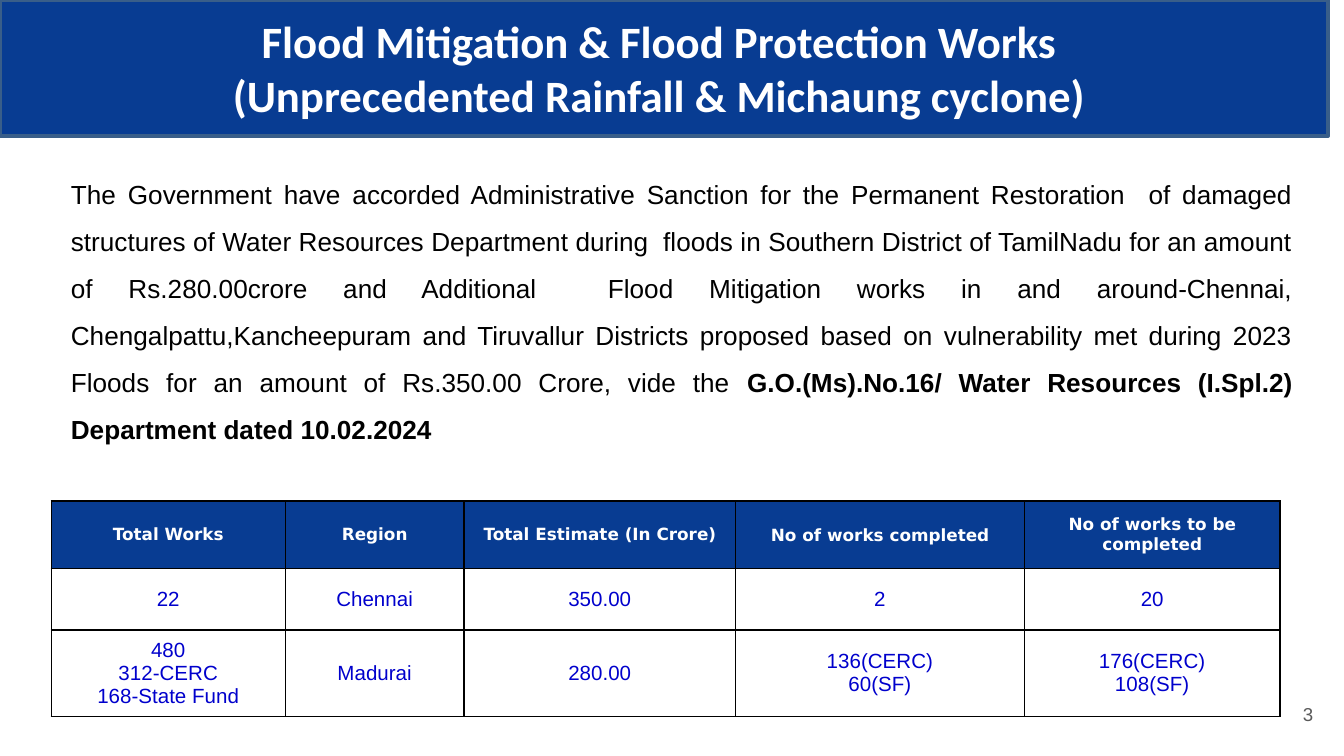
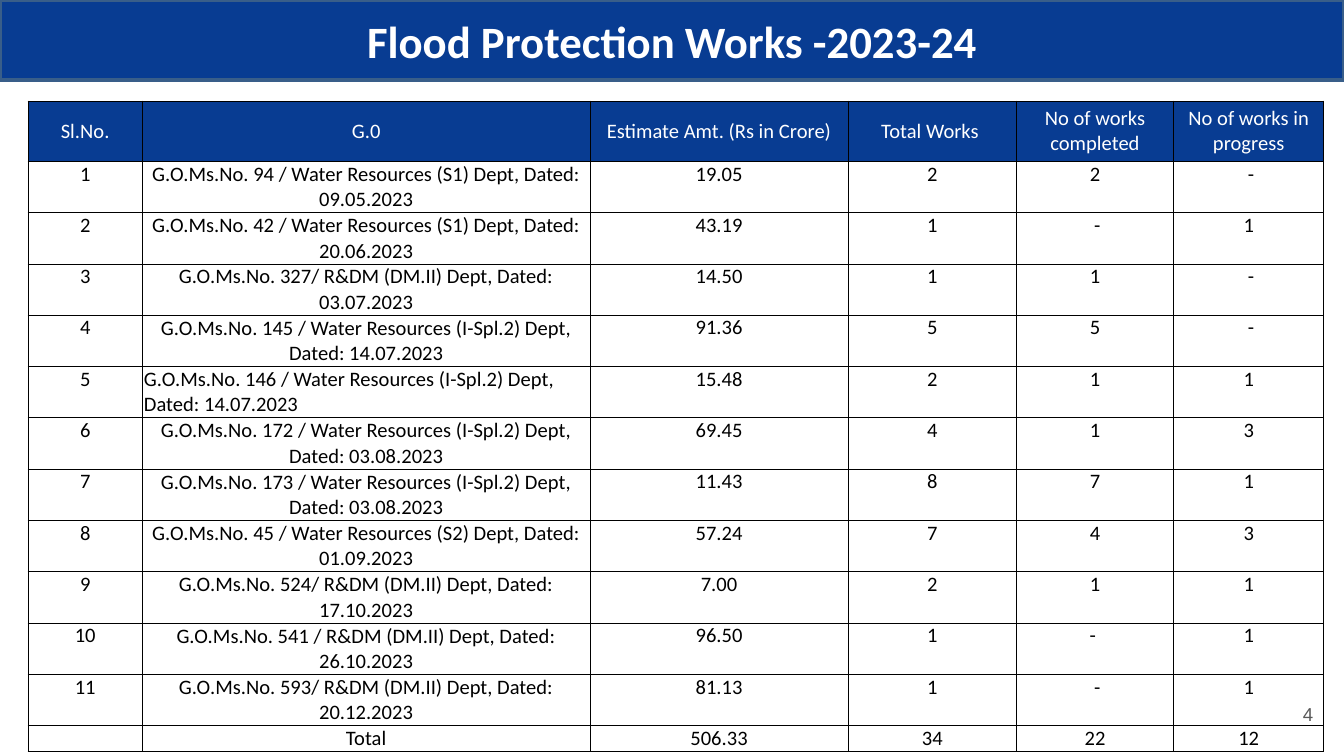
from dataclasses import dataclass

from lxml.etree import SubElement
from pptx import Presentation
from pptx.dml.color import RGBColor
from pptx.enum.shapes import MSO_SHAPE as Preset
from pptx.enum.text import MSO_ANCHOR as Anchor, MSO_AUTO_SIZE as AutoSize, PP_ALIGN as Align
from pptx.oxml.ns import qn
from pptx.util import Cm, Pt

# Colours
NAVY = RGBColor(0x08, 0x3C, 0x92)
BAND_EDGE = RGBColor(0x39, 0x5E, 0x89)
WHITE = RGBColor(0xFF, 0xFF, 0xFF)
BLACK = RGBColor(0x00, 0x00, 0x00)
BLUE = RGBColor(0x00, 0x00, 0xCC)
GREY = RGBColor(0x59, 0x59, 0x59)


@dataclass
class TextStyle:
    name: str
    size: float
    color: RGBColor
    bold: bool = False


# Text styles
TITLE = TextStyle("Calibri", 24, WHITE, True)
BODY = TextStyle("Arial", 14, BLACK)
PAGE_NUMBER = TextStyle("Arial", 10, GREY)
REGION_HEADER = TextStyle("DejaVu Sans", 9, WHITE, True)
REGION_BODY = TextStyle("Arial", 11, BLUE)
ORDER_HEADER = TextStyle("Calibri", 11, WHITE)
ORDER_BODY = TextStyle("Calibri", 11, BLACK)

# Slide content
SANCTION = (
    "The Government have accorded Administrative Sanction for the Permanent "
    "Restoration  of damaged structures of Water Resources Department during  floods "
    "in Southern District of TamilNadu for an amount of Rs.280.00crore and Additional  "
    "Flood Mitigation works in and around-Chennai, Chengalpattu,Kancheepuram and "
    "Tiruvallur Districts proposed based on vulnerability met during 2023 Floods for "
    "an amount of Rs.350.00 Crore, vide the "
)
SANCTION_ORDER = "G.O.(Ms).No.16/ Water Resources (I.Spl.2) Department dated 10.02.2024"

REGION_ROWS = [
    ("Total Works", "Region", "Total Estimate (In Crore)", "No of works completed",
     "No of works to be completed"),
    ("22", "Chennai", "350.00", "2", "20"),
    ("480\n312-CERC\n168-State Fund", "Madurai", "280.00", "136(CERC)\n60(SF)",
     "176(CERC)\n108(SF)"),
]

ORDER_HEADINGS = ("Sl.No.", "G.0", "Estimate Amt. (Rs in Crore)", "Total Works ",
                  "No of works completed", "No of works in progress")
# Order number and department, date, estimate, total, completed, in progress
ORDERS = [
    ("94 / Water Resources (S1)", "09.05.2023", "19.05", "2", "2", " -"),
    ("42 / Water Resources (S1)", "20.06.2023", "43.19", "1", " -", "1"),
    ("327/ R&DM (DM.II)", "03.07.2023", "14.50", "1", "1", " -"),
    ("145 / Water Resources (I-Spl.2)", "14.07.2023", "91.36", "5", "5", " -"),
    ("146 / Water Resources (I-Spl.2)", "14.07.2023", "15.48", "2", "1", "1"),
    ("172 / Water Resources (I-Spl.2)", "03.08.2023", "69.45", "4", "1", "3"),
    ("173 / Water Resources (I-Spl.2)", "03.08.2023", "11.43", "8", "7", "1"),
    ("45 / Water Resources (S2)", "01.09.2023", "57.24", "7", "4", "3"),
    ("524/ R&DM (DM.II)", "17.10.2023", "7.00", "2", "1", "1"),
    ("541 / R&DM (DM.II)", "26.10.2023", "96.50", "1", "- ", "1"),
    ("593/ R&DM (DM.II)", "20.12.2023", "81.13", "1", " -", "1"),
]
ORDER_TOTALS = ("", "Total", "506.33", "34", "22", "12")


def style_paragraph(paragraph, style, alignment):
    paragraph.alignment = alignment
    font = paragraph.font
    font.name = style.name
    font.size = Pt(style.size)
    font.bold = style.bold
    font.color.rgb = style.color


def write_lines(frame, text, style, alignment=Align.CENTER):
    for index, line in enumerate(text.split("\n")):
        paragraph = frame.add_paragraph() if index else frame.paragraphs[0]
        style_paragraph(paragraph, style, alignment)
        if line:
            paragraph.add_run().text = line
        else:
            # Keeps an empty cell as low as its neighbours
            SubElement(paragraph._p, qn("a:endParaRPr"), sz=str(style.size * 100))


def set_margins(target, horizontal, vertical):
    target.margin_left = target.margin_right = Cm(horizontal)
    target.margin_top = target.margin_bottom = Cm(vertical)


def add_title_band(slide, text, width, height):
    band = slide.shapes.add_shape(Preset.RECTANGLE, 0, 0, Cm(width), Cm(height))
    band.shadow.inherit = False
    band.fill.solid()
    band.fill.fore_color.rgb = NAVY
    band.line.color.rgb = BAND_EDGE
    band.line.width = Pt(2)
    frame = band.text_frame
    frame.word_wrap = True
    frame.vertical_anchor = Anchor.MIDDLE
    set_margins(frame, 0.25, 0.13)
    write_lines(frame, text, TITLE)


def add_page_number(slide, number):
    box = slide.shapes.add_textbox(Cm(23.55), Cm(12.95), Cm(1.52), Cm(1.09))
    frame = box.text_frame
    frame.word_wrap = True
    frame.vertical_anchor = Anchor.MIDDLE
    set_margins(frame, 0.25, 0.25)
    write_lines(frame, str(number), PAGE_NUMBER, Align.RIGHT)


def add_sanction_text(slide):
    box = slide.shapes.add_textbox(Cm(1.09), Cm(2.95), Cm(23.6), Cm(5.64))
    frame = box.text_frame
    frame.word_wrap = True
    frame.auto_size = AutoSize.SHAPE_TO_FIT_TEXT
    paragraph = frame.paragraphs[0]
    style_paragraph(paragraph, BODY, Align.JUSTIFY)
    paragraph.line_spacing = 1.5
    paragraph.add_run().text = SANCTION
    order = paragraph.add_run()
    order.text = SANCTION_ORDER
    order.font.bold = True


def add_borders(cell, width):
    properties = cell._tc.get_or_add_tcPr()
    for side in ("a:lnL", "a:lnR", "a:lnT", "a:lnB"):
        line = SubElement(properties, qn(side), w=str(Pt(width)))
        fill = SubElement(line, qn("a:solidFill"))
        SubElement(fill, qn("a:srgbClr"), val=str(BLACK))


def add_grid(slide, position, widths, heights, rows, margins, border, header, body):
    left, top = position
    table = slide.shapes.add_table(
        len(rows), len(widths), Cm(left), Cm(top), Cm(sum(widths)), Cm(sum(heights))).table
    table.first_row = table.horz_banding = False
    for column, width in zip(table.columns, widths):
        column.width = Cm(width)
    for row, height in zip(table.rows, heights):
        row.height = Cm(height)
    for row_index, texts in enumerate(rows):
        for column_index, text in enumerate(texts):
            cell = table.cell(row_index, column_index)
            cell.vertical_anchor = Anchor.MIDDLE
            set_margins(cell, *margins)
            add_borders(cell, border)
            if row_index == 0:
                cell.fill.solid()
                cell.fill.fore_color.rgb = NAVY
            else:
                cell.fill.background()
            write_lines(cell.text_frame, text, body if row_index else header)
    return table


def add_region_table(slide):
    table = add_grid(slide, (0.97, 9.47), (4.42, 3.38, 5.13, 5.46, 4.83),
                     (1.27, 1.17, 1.63), REGION_ROWS, (0.25, 0.1), 0.75,
                     REGION_HEADER, REGION_BODY)
    table.cell(0, 3).text_frame.paragraphs[0].line_spacing = 1.15


def add_order_table(slide):
    rows = [ORDER_HEADINGS]
    for serial, (order, date, *values) in enumerate(ORDERS, 1):
        rows.append((str(serial), f"G.O.Ms.No. {order} Dept, Dated: {date}", *values))
    rows.append(ORDER_TOTALS)
    heights = [1.14] + [0.97] * len(ORDERS) + [0.48]
    table = add_grid(slide, (0.53, 1.91), (2.16, 8.46, 4.88, 3.18, 2.97, 2.84),
                     heights, rows, (0.03, 0), 0.5, ORDER_HEADER, ORDER_BODY)
    # Figures sit at the top of their cells, order names in the middle
    for row in range(1, len(rows)):
        for column in (0, 2, 3, 4, 5):
            table.cell(row, column).vertical_anchor = Anchor.TOP
    table.cell(len(rows) - 1, 1).vertical_anchor = Anchor.BOTTOM
    table.cell(5, 1).text_frame.paragraphs[0].alignment = Align.LEFT


def main():
    presentation = Presentation()
    presentation.slide_width = Cm(25.4)
    presentation.slide_height = Cm(14.29)
    blank = presentation.slide_layouts[6]

    # Sanction and works by region
    slide = presentation.slides.add_slide(blank)
    add_sanction_text(slide)
    add_title_band(slide, "Flood Mitigation & Flood Protection Works \n"
                          "(Unprecedented Rainfall & Michaung cyclone) ", 25.1, 2.57)
    add_region_table(slide)
    add_page_number(slide, 3)

    # Works by government order
    slide = presentation.slides.add_slide(blank)
    add_order_table(slide)
    add_title_band(slide, "Flood Protection Works -2023-24", 25.4, 1.52)
    add_page_number(slide, 4)

    presentation.save("out.pptx")


if __name__ == "__main__":
    main()
